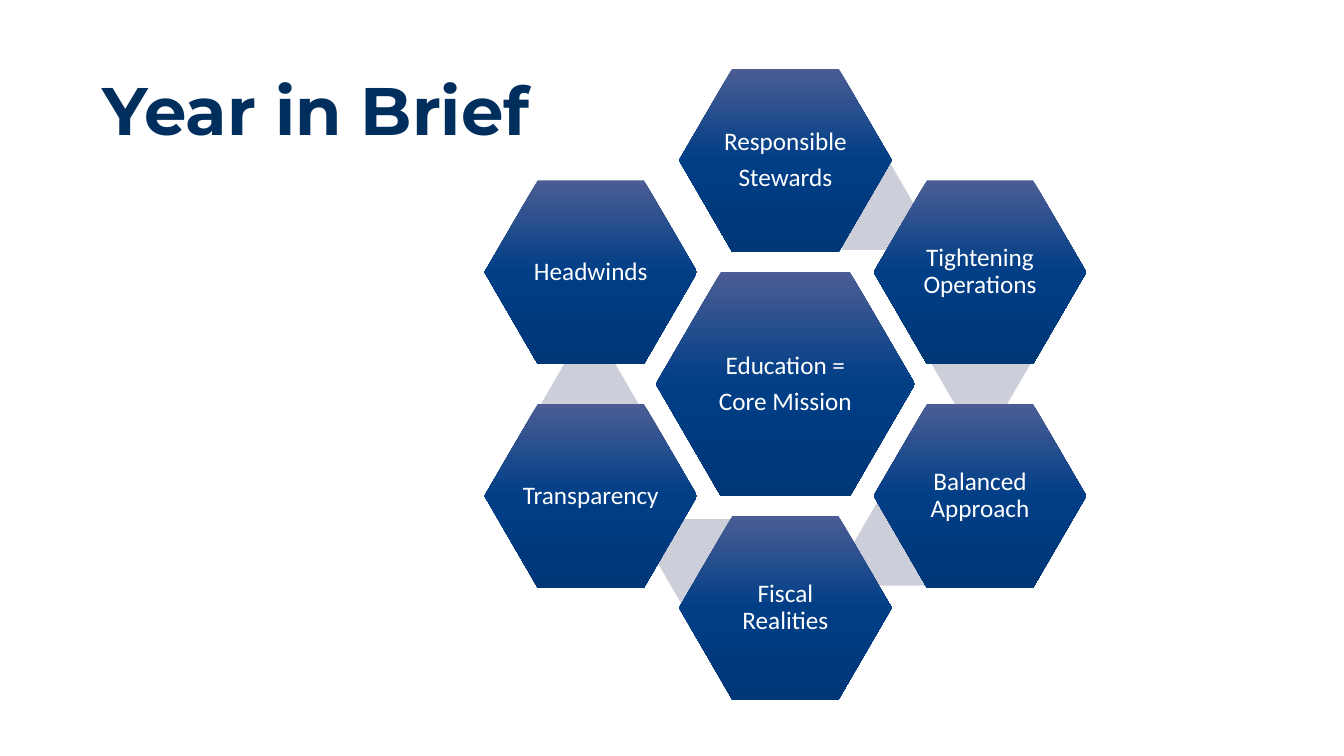
"""Build the Year in Brief slide: a ring of hexagons around the core mission."""
from copy import deepcopy

from pptx import Presentation
from pptx.dml.color import RGBColor
from pptx.enum.shapes import MSO_SHAPE as SHAPE
from pptx.enum.text import MSO_ANCHOR as ANCHOR, PP_ALIGN as ALIGN
from pptx.util import Inches, Pt

GRADIENT = [(0, "4B5D94"), (0.5, "003E86"), (1, "003777")]
LABEL = {"name": "Calibri", "size": Pt(18), "color": "FFFFFF"}


def set_font(r, fmt):
    """Apply a dict of font values to a run."""
    for key, value in fmt.items():
        if key == "color":
            r.font.color.rgb = RGBColor.from_string(value)
        else:
            setattr(r.font, key, value)


def add_hexagon(shapes, cx, cy, w, h, lines=()):
    """Add a borderless hexagon by its centre, with one paragraph per line."""
    sp = shapes.add_shape(SHAPE.HEXAGON, Inches(cx - w / 2), Inches(cy - h / 2), Inches(w), Inches(h))
    sp.adjustments[0] = 0.29
    sp.shadow.inherit = False
    sp.line.fill.background()
    tf = sp.text_frame
    tf.word_wrap = True
    tf.vertical_anchor = ANCHOR.MIDDLE
    for side in ("left", "right", "top", "bottom"):
        setattr(tf, f"margin_{side}", 0)
    for i, line in enumerate(lines):
        p = tf.paragraphs[0] if i == 0 else tf.add_paragraph()
        p.alignment, p.line_spacing, p.space_after = ALIGN.CENTER, 0.9, Pt(6.3)
        r = p.add_run()
        r.text = line
        set_font(r, LABEL)
    if not lines:
        sp.fill.solid()
        sp.fill.fore_color.rgb = RGBColor.from_string("CCCED9")
        return
    sp.fill.gradient()
    sp.fill.gradient_angle = 270
    stops = sp._element.spPr.xpath("a:gradFill/a:gsLst")[0]
    stops.append(deepcopy(stops[0]))
    for stop, (position, color) in zip(sp.fill.gradient_stops, GRADIENT):
        stop.position = position
        stop.color.rgb = RGBColor.from_string(color)


prs = Presentation()
prs.slide_width, prs.slide_height = Inches(13.33), Inches(7.5)
s = prs.slides.add_slide(prs.slide_layouts[5])

title = s.shapes.title
title.left, title.top, title.width, title.height = Inches(0.92), Inches(0.5), Inches(5.75), Inches(1.04)
tf = title.text_frame
tf.word_wrap = True
tf.vertical_anchor = ANCHOR.BOTTOM
p = tf.paragraphs[0]
p.alignment, p.line_spacing = ALIGN.LEFT, 0.9
r = p.add_run()
r.text = "Year in Brief"
set_font(r, {"name": "Montserrat", "size": Pt(48), "bold": True, "color": "002F5E"})

CX, CY, DX, DY = 7.79, 3.81, 1.93, 1.11
ring = [
    (["Responsible", "Stewards"], 0, -2, (8.6, 2.06)),
    (["Tightening Operations"], 1, -1, (9.73, 3.62)),
    (["Balanced Approach"], 1, 1, (8.95, 5.39)),
    (["Fiscal Realities"], 0, 2, (7, 5.57)),
    (["Transparency"], -1, 1, (5.85, 4.01)),
    (["Headwinds"], -1, -1, None),
]
shapes = s.shapes.add_group_shape().shapes
add_hexagon(shapes, CX, CY, 2.57, 2.22, ["Education =", "Core Mission"])
for lines, col, row, link in ring:
    if link:
        add_hexagon(shapes, *link, 0.97, 0.84)
    add_hexagon(shapes, CX + col * DX, CY + row * DY, 2.11, 1.82, lines)

prs.save("out.pptx")
